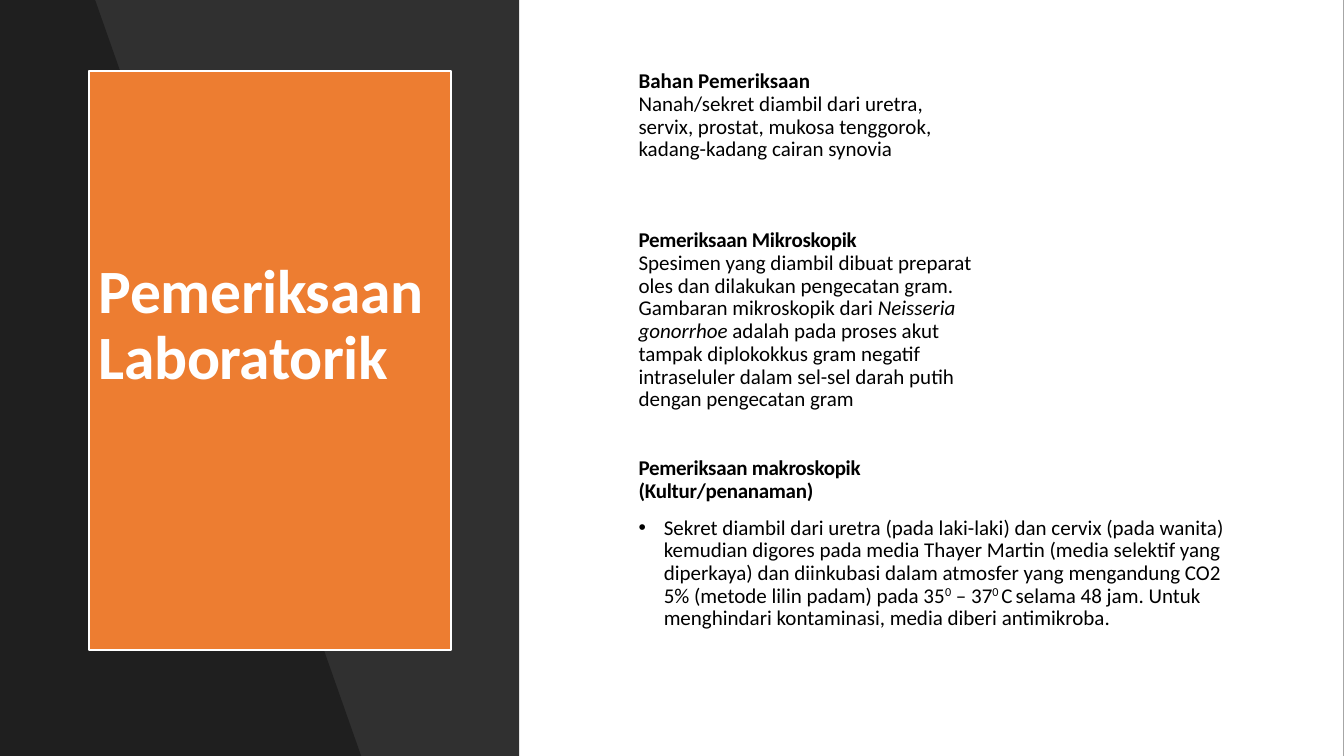
from lxml.etree import SubElement
from pptx import Presentation
from pptx.dml.color import RGBColor
from pptx.enum.shapes import MSO_SHAPE as Preset
from pptx.enum.text import MSO_ANCHOR as Anchor, MSO_AUTO_SIZE as AutoSize, PP_ALIGN as Align
from pptx.oxml.ns import qn
from pptx.util import Pt

WIDTH, HEIGHT = 960, 540
FRAME_TOP, FRAME_HEIGHT = 50.4, 414
BLACK, WHITE, ORANGE = "000000", "FFFFFF", "ED7D31"


def colour(hex_string):
    return RGBColor.from_string(hex_string)


def add_text(paragraph, text, size=15, color=BLACK, bold=False, italic=False,
             spacing=0, baseline=0):
    run = paragraph.add_run()
    run.text = text
    font = run.font
    font.name, font.size, font.bold, font.italic = "Calibri", Pt(size), bold, italic
    font.color.rgb = colour(color)
    properties = run.font._element
    if spacing:
        properties.set("spc", str(round(spacing * 100)))
    if baseline:
        properties.set("baseline", str(baseline * 1000))


class SlideBuilder:
    line_spacing = 0.9

    def __init__(self, presentation):
        self.slide = presentation.slides.add_slide(presentation.slide_layouts[1])

    def background(self, color):
        fill = self.slide.background.fill
        fill.solid()
        fill.fore_color.rgb = colour(color)

    def paint(self, shape, color, opacity=100):
        shape.shadow.inherit = False
        shape.fill.solid()
        shape.fill.fore_color.rgb = colour(color)
        shape.line.fill.background()
        if opacity < 100:
            fill_color = shape.element.spPr.find(qn("a:solidFill"))[0]
            SubElement(fill_color, qn("a:alpha"), val=str(opacity * 1000))

    def panel(self, width, color, opacity=100):
        shape = self.slide.shapes.add_shape(Preset.RECTANGLE, 0, 0, Pt(width), Pt(HEIGHT))
        self.paint(shape, color, opacity)

    def polygon(self, points, color, opacity=100):
        builder = self.slide.shapes.build_freeform(*points[0], scale=Pt(1))
        builder.add_line_segments(points[1:], close=True)
        self.paint(builder.convert_to_shape(), color, opacity)

    def place(self, placeholder, left, width, anchor):
        placeholder.left, placeholder.top = Pt(left), Pt(FRAME_TOP)
        placeholder.width, placeholder.height = Pt(width), Pt(FRAME_HEIGHT)
        placeholder.element.getparent().append(placeholder.element)  # bring to front
        frame = placeholder.text_frame
        frame.word_wrap, frame.auto_size = True, AutoSize.NONE
        frame.vertical_anchor = anchor
        return frame

    def title(self, text, left, width, color):
        shape = self.slide.shapes.title
        frame = self.place(shape, left, width, Anchor.MIDDLE)
        frame.margin_bottom = Pt(51.6)
        self.paint(shape, color)
        shape.line.color.rgb = colour(WHITE)
        shape.line.width = Pt(1.5)
        paragraph = frame.paragraphs[0]
        paragraph.alignment, paragraph.line_spacing = Align.LEFT, self.line_spacing
        add_text(paragraph, text, size=44, color=WHITE, bold=True, spacing=-0.3)

    def body(self, paragraphs, left, width):
        frame = self.place(self.slide.placeholders[1], left, width, Anchor.TOP)
        frame.margin_top = 0
        for index, (layout, runs) in enumerate(paragraphs):
            paragraph = frame.add_paragraph() if index else frame.paragraphs[0]
            self.body_paragraph(paragraph, runs, **layout)

    def body_paragraph(self, paragraph, runs, before=0, right=0, bullet=False):
        paragraph.alignment, paragraph.line_spacing = Align.LEFT, self.line_spacing
        paragraph.space_before, paragraph.space_after = Pt(before), Pt(0)
        properties = paragraph._p.get_or_add_pPr()
        properties.set("marL", str(Pt(45 if bullet else 27)))
        properties.set("marR", str(Pt(right)))
        properties.set("indent", str(Pt(-18 if bullet else 0)))
        if bullet:
            SubElement(properties, qn("a:buFont"), typeface="Arial")
            SubElement(properties, qn("a:buChar"), char="•")
        else:
            SubElement(properties, qn("a:buNone"))
        for text, style in runs:
            add_text(paragraph, text, **style)


PLAIN, ITALIC, RAISED = {}, {"italic": True}, {"baseline": 30}
HEADING = {"bold": True, "spacing": -0.2}

EXAMINATIONS = [
    ({}, [("Bahan Pemeriksaan", {"bold": True})]),
    ({"right": 207}, [
        ("Nanah/sekret diambil dari uretra, servix, prostat, mukosa tenggorok, "
         "kadang-kadang cairan synovia", PLAIN)]),
    ({"before": 48.8}, [("Pemeriksaan Mikroskopik", HEADING)]),
    ({"right": 186}, [
        ("Spesimen yang diambil dibuat preparat oles dan dilakukan pengecatan gram. "
         "Gambaran mikroskopik dari ", PLAIN),
        ("Neisseria gonorrhoe ", ITALIC),
        ("adalah pada proses akut tampak diplokokkus gram negatif intraseluler dalam "
         "sel-sel darah putih dengan pengecatan gram", PLAIN)]),
    ({"before": 33, "right": 186}, [("Pemeriksaan makroskopik (Kultur/penanaman)", HEADING)]),
    ({"before": 10, "bullet": True}, [
        ("Sekret diambil dari uretra (pada laki-laki) dan cervix (pada wanita) kemudian "
         "digores pada media Thayer Martin (media selektif yang diperkaya) dan diinkubasi "
         "dalam atmosfer yang mengandung CO2 5% (metode lilin padam) pada 35", PLAIN),
        ("0", RAISED), (" – 37", PLAIN), ("0 ", RAISED), ("C ", {"spacing": -1.1}),
        ("selama 48 jam. Untuk menghindari kontaminasi, media diberi antimikroba.", PLAIN)]),
]


def main():
    presentation = Presentation()
    presentation.slide_width, presentation.slide_height = Pt(WIDTH), Pt(HEIGHT)
    builder = SlideBuilder(presentation)

    # Backdrop: white page, dark side band and its slanted shade
    builder.background(BLACK)
    builder.panel(959.76, WHITE)
    builder.panel(370.8, BLACK, opacity=81)
    builder.polygon([(0, 0), (68.4, 0), (258.5, HEIGHT), (0, HEIGHT)], BLACK, opacity=35)

    # Title card and examination list
    builder.title("Pemeriksaan Laboratorik", 63.4, 258.5, ORANGE)
    builder.body(EXAMINATIONS, 421.9, 474.5)

    presentation.save("out.pptx")


if __name__ == "__main__":
    main()
